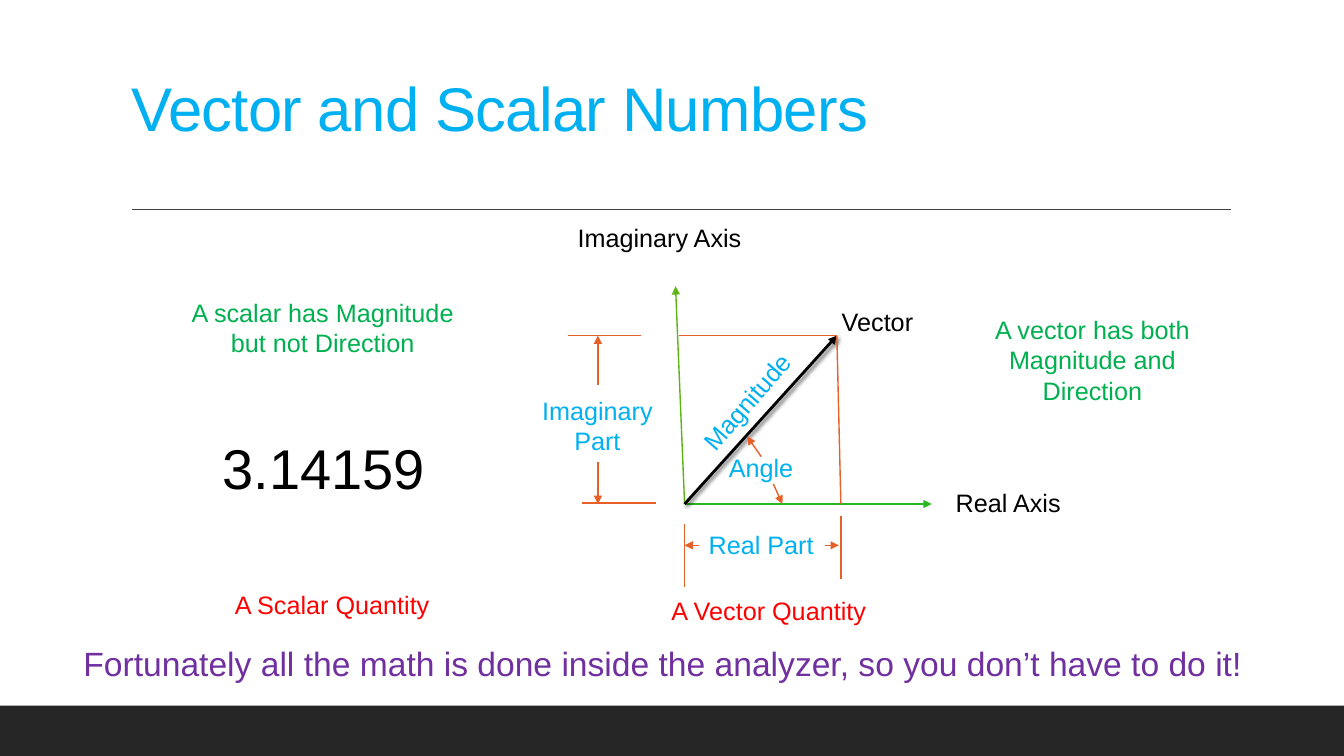
import pptx
import pptx.dml.color
import pptx.enum.shapes
import pptx.enum.text
import pptx.oxml
import pptx.oxml.ns
import pptx.util

RGBColor = pptx.dml.color.RGBColor
ALIGN = pptx.enum.text.PP_ALIGN
AUTO_SIZE = pptx.enum.text.MSO_AUTO_SIZE

WHITE = RGBColor(0xFF, 0xFF, 0xFF)
BLACK = RGBColor(0x00, 0x00, 0x00)
BAND_GRAY = RGBColor(0x26, 0x26, 0x26)
RULE_GRAY = RGBColor(0x40, 0x40, 0x40)
SKY_BLUE = RGBColor(0x00, 0xB0, 0xF0)
REAL_GREEN = RGBColor(0x27, 0xB8, 0x21)
IMAGINARY_GREEN = RGBColor(0x5D, 0xB4, 0x14)
TEXT_GREEN = RGBColor(0x00, 0xB0, 0x50)
ORANGE = RGBColor(0xE7, 0x60, 0x29)
RED = RGBColor(0xFF, 0x00, 0x00)
PURPLE = RGBColor(0x70, 0x30, 0xA0)

FONT = "Arial"
SLIDE_WIDTH = pptx.util.Inches(13.33)
SLIDE_HEIGHT = pptx.util.Inches(7.5)
COLUMNS, ROWS = 133.3, 75  # square grid cells

# Key points of the diagram, in columns and rows
ORIGIN = (67.9, 50)
TIP = (83, 33.3)
FOOT = (83.4, 50)
IMAGINARY_ARROW_X = 59.3
REAL_ARROW_Y = 54.1

SHADOW = (
    '<a:outerShdw %s blurRad="38100" dist="25400" dir="2700000" rotWithShape="0">'
    '<a:srgbClr val="000000"><a:alpha val="60000"/></a:srgbClr></a:outerShdw>'
    % pptx.oxml.ns.nsdecls("a")
)


def column(number):
    return round(SLIDE_WIDTH * number / COLUMNS)


def row(number):
    return round(SLIDE_HEIGHT * number / ROWS)


def place(shape, box):
    left, top, width, height = box
    shape.left, shape.top = column(left), row(top)
    shape.width, shape.height = column(width), row(height)


def format_text(text_frame, size, color, alignment):
    for paragraph in text_frame.paragraphs:
        paragraph.alignment = alignment
        for run in paragraph.runs:
            run.font.name = FONT
            run.font.size = pptx.util.Pt(size)
            run.font.color.rgb = color


def add_title(slide, text, box):
    title = slide.shapes.title
    place(title, box)
    frame = title.text_frame
    frame.text = text
    frame.auto_size = AUTO_SIZE.NONE
    frame.vertical_anchor = pptx.enum.text.MSO_ANCHOR.BOTTOM
    format_text(frame, 44, SKY_BLUE, ALIGN.LEFT)
    paragraph = frame.paragraphs[0]
    paragraph.line_spacing = 0.9
    paragraph.runs[0].font._element.set("spc", "-50")


def add_band(slide, box):
    band = slide.shapes.add_shape(pptx.enum.shapes.MSO_SHAPE.RECTANGLE, 0, 0, 0, 0)
    place(band, box)
    band.shadow.inherit = False
    band.fill.solid()
    band.fill.fore_color.rgb = BAND_GRAY
    band.line.fill.background()


def add_label(slide, text, box, color, size=18, alignment=ALIGN.LEFT,
              wrap=False, rotation=0):
    label = slide.shapes.add_textbox(0, 0, 0, 0)
    place(label, box)
    label.rotation = rotation
    frame = label.text_frame
    frame.text = text
    frame.word_wrap = wrap
    frame.auto_size = AUTO_SIZE.SHAPE_TO_FIT_TEXT
    format_text(frame, size, color, alignment)


def add_line(slide, start, end, color=ORANGE, width=1, arrow=False, shadow=False):
    line = slide.shapes.add_connector(
        pptx.enum.shapes.MSO_CONNECTOR.STRAIGHT,
        column(start[0]), row(start[1]), column(end[0]), row(end[1]))
    line.line.color.rgb = color
    line.line.width = pptx.util.Pt(width)
    if arrow:
        line.line._get_or_add_ln().append(pptx.oxml.parse_xml(
            '<a:tailEnd %s type="triangle"/>' % pptx.oxml.ns.nsdecls("a")))
    effects = pptx.oxml.parse_xml('<a:effectLst %s/>' % pptx.oxml.ns.nsdecls("a"))
    if shadow:
        effects.append(pptx.oxml.parse_xml(SHADOW))
    line._element.spPr.append(effects)


def add_diagram_lines(slide):
    # Axes and the vector
    add_line(slide, ORIGIN, (92.4, 50), REAL_GREEN, arrow=True)
    add_line(slide, ORIGIN, (67, 28.4), IMAGINARY_GREEN, arrow=True)
    add_line(slide, ORIGIN, TIP, BLACK, width=2, arrow=True, shadow=True)

    # Projections and extension lines
    for start, end in (
        (TIP, (67.3, TIP[1])),
        (TIP, FOOT),
        ((63.6, TIP[1]), (56.3, TIP[1])),
        ((65.1, 49.9), (57.7, 49.9)),
        ((ORIGIN[0], 52), (ORIGIN[0], 58.2)),
        ((FOOT[0], 51.2), (FOOT[0], 57.4)),
    ):
        add_line(slide, start, end)

    # Dimension arrows: imaginary part, real part, angle
    for start, end in (
        ((IMAGINARY_ARROW_X, 38.2), (IMAGINARY_ARROW_X, TIP[1])),
        ((IMAGINARY_ARROW_X, 45.8), (IMAGINARY_ARROW_X, ORIGIN[1])),
        ((81.8, REAL_ARROW_Y), (83.2, REAL_ARROW_Y)),
        ((69.3, REAL_ARROW_Y), (ORIGIN[0], REAL_ARROW_Y)),
        ((75.5, 45.3), (74.1, 43.3)),
        ((76.7, 48), (77.6, ORIGIN[1])),
    ):
        add_line(slide, start, end, arrow=True)


def add_diagram_labels(slide):
    for text, box, color in (
        ("Real Axis", (93.8, 47.9, 12.5, 4), BLACK),
        ("Imaginary Axis", (56.3, 21.6, 18.4, 4), BLACK),
        ("Vector", (82.5, 29.9, 9.2, 4), BLACK),
        ("Real Part", (69.3, 52, 12.5, 4), SKY_BLUE),
        ("Angle", (71.3, 44.4, 8.5, 4), SKY_BLUE),
        ("A Vector Quantity", (65.6, 58.6, 21.5, 4), RED),
        ("A Scalar Quantity", (22.3, 58, 21.5, 4), RED),
    ):
        add_label(slide, text, box, color)
    add_label(slide, "Magnitude", (67.2, 37.8, 13.8, 4), SKY_BLUE, rotation=310.8)


def add_statements(slide):
    for text, box, color in (
        ("Imaginary\nPart", (52.7, 38.7, 13.1, 7.1), SKY_BLUE),
        ("A scalar has Magnitude\nbut not Direction", (17.9, 29, 28.2, 7.1), TEXT_GREEN),
        ("A vector has both\nMagnitude and\nDirection", (97.6, 30.7, 21.5, 10.1), TEXT_GREEN),
    ):
        add_label(slide, text, box, color, alignment=ALIGN.CENTER)
    add_label(slide, "3.14159", (21.1, 42.5, 22.9, 7.7), BLACK, size=40, wrap=True)
    add_label(
        slide,
        "Fortunately all the math is done inside the analyzer, so you don’t have to do it!",
        (7.3, 63.3, 120.4, 5), PURPLE, size=24, wrap=True)


def main():
    presentation = pptx.Presentation()
    presentation.slide_width = SLIDE_WIDTH
    presentation.slide_height = SLIDE_HEIGHT
    slide = presentation.slides.add_slide(presentation.slide_layouts[5])
    slide.background.fill.solid()
    slide.background.fill.fore_color.rgb = WHITE

    # Frame of the slide
    add_band(slide, (0, 70, COLUMNS, 5))
    add_line(slide, (13.1, 20.8), (122.1, 20.8), RULE_GRAY)
    add_title(slide, "Vector and Scalar Numbers", (12, 3.1, 110, 11.8))

    # Vector diagram and its explanations
    add_diagram_lines(slide)
    add_diagram_labels(slide)
    add_statements(slide)

    presentation.save("out.pptx")


if __name__ == "__main__":
    main()
